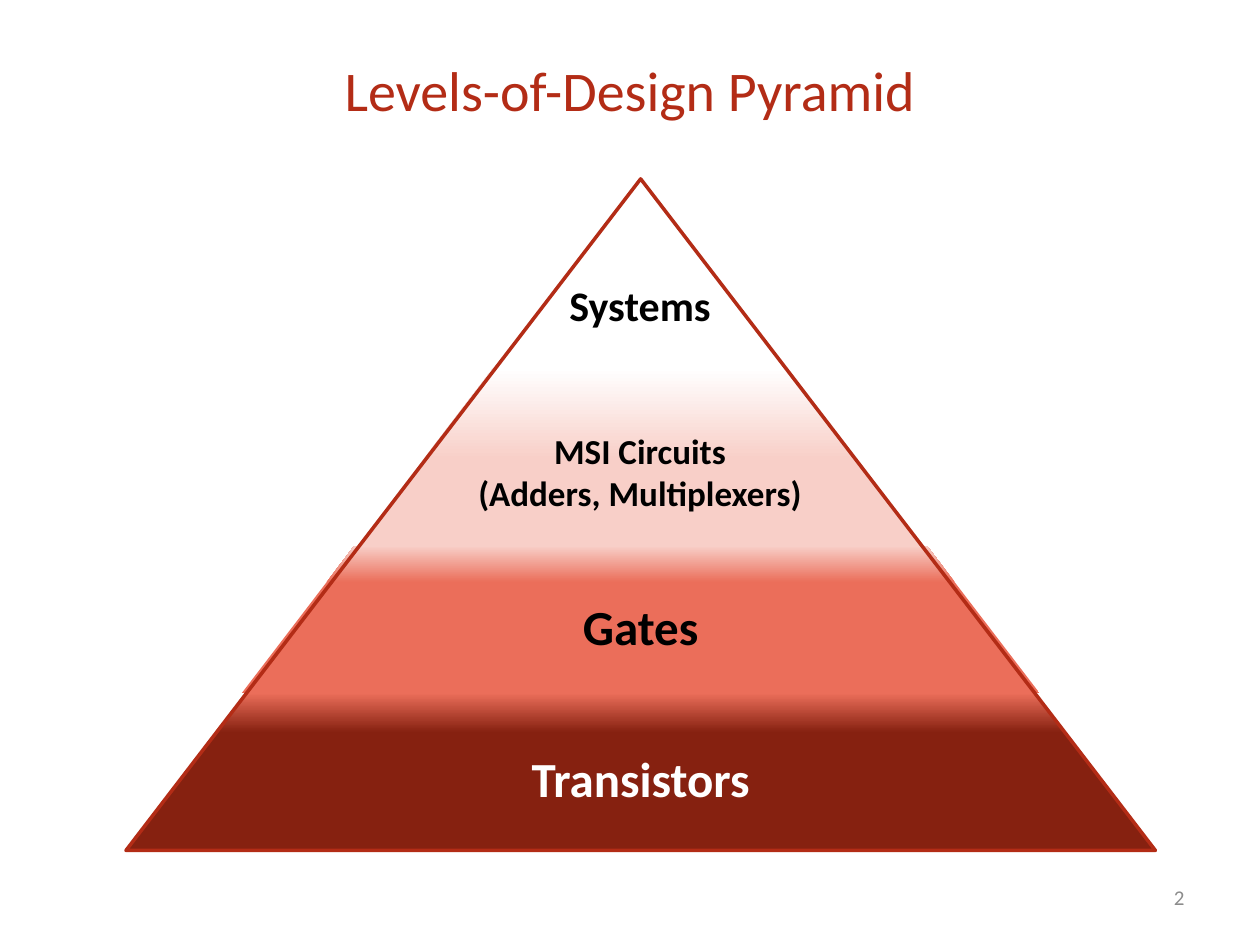
from copy import deepcopy
from dataclasses import dataclass

from pptx import Presentation
from pptx.dml.color import RGBColor as RGB
from pptx.enum.shapes import MSO_SHAPE as SHAPE
from pptx.enum.text import MSO_ANCHOR as ANCHOR, PP_ALIGN as ALIGN
from pptx.oxml.ns import qn
from pptx.util import Inches, Pt


@dataclass(frozen=True)
class Theme:
    font: str = "Calibri"
    accent: str = "B32C16"
    dark: str = "862110"
    mid: str = "EB6E5A"
    pale: str = "F8CFC8"
    white: str = "FFFFFF"
    black: str = "000000"
    grey: str = "8C8C8C"
    title: int = 32
    large: int = 28
    medium: int = 24
    small: int = 20
    number: int = 12


class Deck:
    def __init__(self, theme):
        self.theme = theme
        self.prs = Presentation()
        self.prs.slide_width, self.prs.slide_height = Inches(10), Inches(7.5)
        self.slide = self.prs.slides.add_slide(self.prs.slide_layouts[5])

    def add_lines(self, sp, lines, size, color, bold=False, align=ALIGN.CENTER,
                  anchor=ANCHOR.MIDDLE):
        tf = sp.text_frame
        tf.word_wrap, tf.vertical_anchor = True, anchor
        for i, line in enumerate(lines):
            p = tf.add_paragraph() if i else tf.paragraphs[0]
            p.alignment = align
            r = p.add_run()
            r.text = line
            r.font.name, r.font.size, r.font.bold = self.theme.font, Pt(size), bold
            r.font.color.rgb = RGB.from_string(color)

    def title(self, text, box):
        sp = self.slide.shapes.title
        sp.left, sp.top, sp.width, sp.height = map(Inches, box)
        self.add_lines(sp, [text], self.theme.title, self.theme.accent)

    def text(self, text, box, size, color, **style):
        sp = self.slide.shapes.add_textbox(*map(Inches, box))
        self.add_lines(sp, [text], size, color, **style)

    def shape(self, kind, box):
        sp = self.slide.shapes.add_shape(kind, *map(Inches, box))
        sp.shadow.inherit = False
        return sp

    def level(self, lines, box, size, color, base, hold, top):
        """Trapezoid with a base colour held to a point, then fading upwards."""
        sp = self.shape(SHAPE.TRAPEZOID, box)
        sp.adjustments[0] = 0.765
        sp.line.fill.background()
        sp.fill.gradient()
        sp.fill.gradient_angle = 90
        # The default gradient has two stops; add the third
        stops = next(sp._element.iter(qn("a:gsLst")))
        stops.append(deepcopy(stops[-1]))
        values = ((0, base), (hold, base), (1, top))
        for stop, (position, stop_color) in zip(sp.fill.gradient_stops, values):
            stop.position = position
            stop.color.rgb = RGB.from_string(stop_color)
        self.add_lines(sp, lines, size, color, bold=True)

    def outline(self, box):
        sp = self.shape(SHAPE.ISOSCELES_TRIANGLE, box)
        sp.fill.background()
        sp.line.color.rgb = RGB.from_string(self.theme.accent)
        sp.line.width = Pt(2)


def main():
    t = Theme()
    deck = Deck(t)

    # Title and slide number
    deck.title("Levels-of-Design Pyramid", (0.5, 0.08, 9, 1.25))
    deck.text("2", (7.17, 6.92, 2.33, 0.4), t.number, t.grey, align=ALIGN.RIGHT)

    # Levels, from the base up
    levels = [
        (["Transistors"], (1, 5.5, 8.17, 1.25), t.large, t.white, t.dark, 0.75, t.mid),
        (["Gates"], (1.92, 4.33, 6.33, 1.17), t.large, t.black, t.mid, 0.75, t.pale),
        (["MSI Circuits", "(Adders, Multiplexers)"], (2.83, 2.92, 4.5, 1.42),
         t.small, t.black, t.pale, 0.49, t.white),
    ]
    for level in levels:
        deck.level(*level)

    # Pyramid outline and its tip
    deck.outline((1, 1.42, 8.17, 5.33))
    deck.text("Systems", (4.08, 2.17, 2, 0.5), t.medium, t.black, bold=True,
              anchor=ANCHOR.TOP)

    deck.prs.save("out.pptx")


if __name__ == "__main__":
    main()
